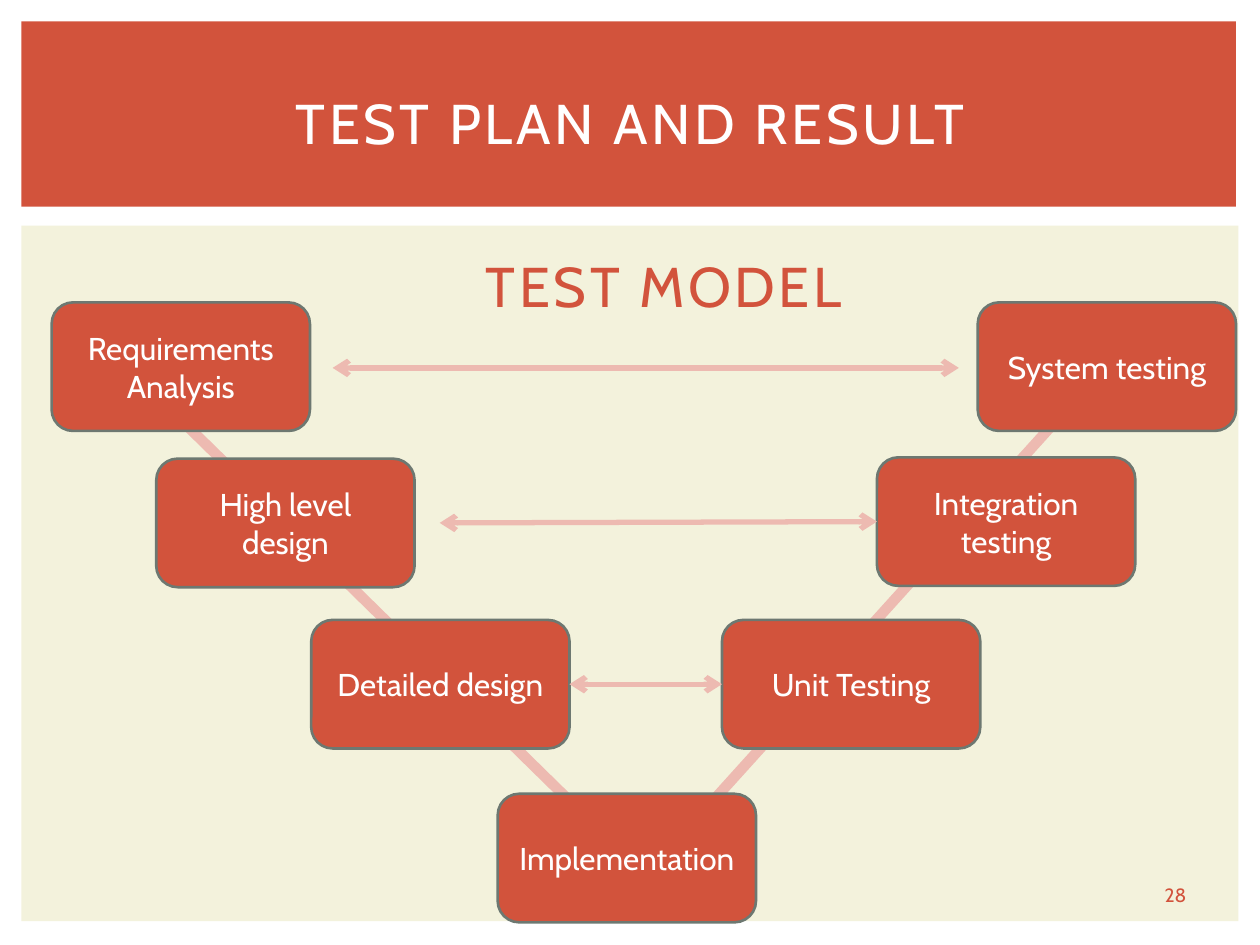
from lxml import etree
from pptx import Presentation
from pptx.dml.color import RGBColor
from pptx.enum.shapes import MSO_CONNECTOR, MSO_SHAPE
from pptx.enum.text import MSO_ANCHOR, PP_ALIGN
from pptx.oxml.ns import qn
from pptx.util import Inches, Pt

RECT = MSO_SHAPE.RECTANGLE
ROUND = MSO_SHAPE.ROUNDED_RECTANGLE
STRAIGHT = MSO_CONNECTOR.STRAIGHT
MIDDLE = MSO_ANCHOR.MIDDLE
CENTER = PP_ALIGN.CENTER

RED = RGBColor(0xD2, 0x53, 0x3C)
CREAM = RGBColor(0xF3, 0xF2, 0xDC)
PINK = RGBColor(0xED, 0xBA, 0xB1)
GRAY = RGBColor(0x6D, 0x78, 0x71)
WHITE = RGBColor(0xFF, 0xFF, 0xFF)

FONT = "Cabin"
LEFT, RIGHT = 1, 3
BOX_W, BOX_H = 2.05, 1.02

STAGES = [
    ("Requirements Analysis", 0.41, 2.4),
    ("High level design", 1.24, 3.64),
    ("Detailed design", 2.47, 4.92),
    ("Implementation", 3.95, 6.3),
    ("Unit Testing", 5.73, 4.92),
    ("Integration testing", 6.96, 3.63),
    ("System testing", 7.76, 2.4),
]


def set_text(sp, text, size, color, spacing=0):
    tf = sp.text_frame
    tf.word_wrap = True
    tf.vertical_anchor = MIDDLE
    p = tf.paragraphs[0]
    p.alignment = CENTER
    p.font.name = FONT
    p.font.size = Pt(size)
    p.font.color.rgb = color
    r = p.add_run()
    r.text = text
    if spacing:
        r._r.get_or_add_rPr().set("spc", str(spacing * 100))


def add_text(s, box, text, size, color, spacing=0):
    sp = s.shapes.add_textbox(*map(Inches, box))
    set_text(sp, text, size, color, spacing)


def add_box(s, kind, box, fill, border=None):
    sp = s.shapes.add_shape(kind, *map(Inches, box))
    sp.shadow.inherit = False
    sp.fill.solid()
    sp.fill.fore_color.rgb = fill
    if border is None:
        sp.line.fill.background()
    else:
        sp.line.color.rgb = border
        sp.line.width = Pt(1.5)
    return sp


def add_line(s, start, end, width, arrows=False):
    cn = s.shapes.add_connector(STRAIGHT, *map(Inches, start + end))
    cn.line.color.rgb = PINK
    cn.line.width = Pt(width)
    if arrows:
        ln = cn.line._get_or_add_ln()
        for tag in ("a:headEnd", "a:tailEnd"):
            etree.SubElement(ln, qn(tag)).set("type", "arrow")
    etree.SubElement(cn._element.spPr, qn("a:effectLst"))
    return cn


def add_header(s, box):
    x, y, w, h = box
    add_box(s, RECT, box, RED)
    add_text(s, (x + 0.25, y + 0.22, w - 0.47, h - 0.32),
             "TEST PLAN AND RESULT", 32, WHITE, 2)


def add_v_model(s, box):
    x, y, w, h = box
    add_box(s, RECT, box, CREAM)
    add_line(s, (x + 8.6, y + 1.12), (x + 4.97, y + 5.14), 6)
    add_line(s, (x + 0.55, y + 0.84), (x + 5.12, y + 5.32), 6)

    stages = {}
    for name, left, top in STAGES:
        sp = add_box(s, ROUND, (left, top, BOX_W, BOX_H), RED, GRAY)
        set_text(sp, name, 18, WHITE)
        stages[name] = sp

    add_line(s, (x + 2.47, y + 1.13), (x + 7.44, y + 1.13), 3, True)
    cn = add_line(s, (x + 3.32, y + 2.36), (x + 6.79, y + 2.35), 3, True)
    cn.end_connect(stages["Integration testing"], LEFT)
    cn = add_line(s, (x + 4.35, y + 3.64), (x + 5.56, y + 3.64), 3, True)
    cn.begin_connect(stages["Detailed design"], RIGHT)
    cn.end_connect(stages["Unit Testing"], LEFT)

    add_text(s, (x + w - 0.82, y + h - 0.36, 0.64, 0.3), "28", 11, RED)
    add_text(s, (x + 2.74, y + 0.1, 4.72, 0.74), "TEST MODEL", 32, RED, 2)


def main():
    prs = Presentation()
    prs.slide_width = Inches(10)
    prs.slide_height = Inches(7.5)
    s = prs.slides.add_slide(prs.slide_layouts[6])
    add_header(s, (0.17, 0.17, 9.64, 1.47))
    add_v_model(s, (0.17, 1.79, 9.66, 5.52))
    prs.save("out.pptx")


if __name__ == "__main__":
    main()
